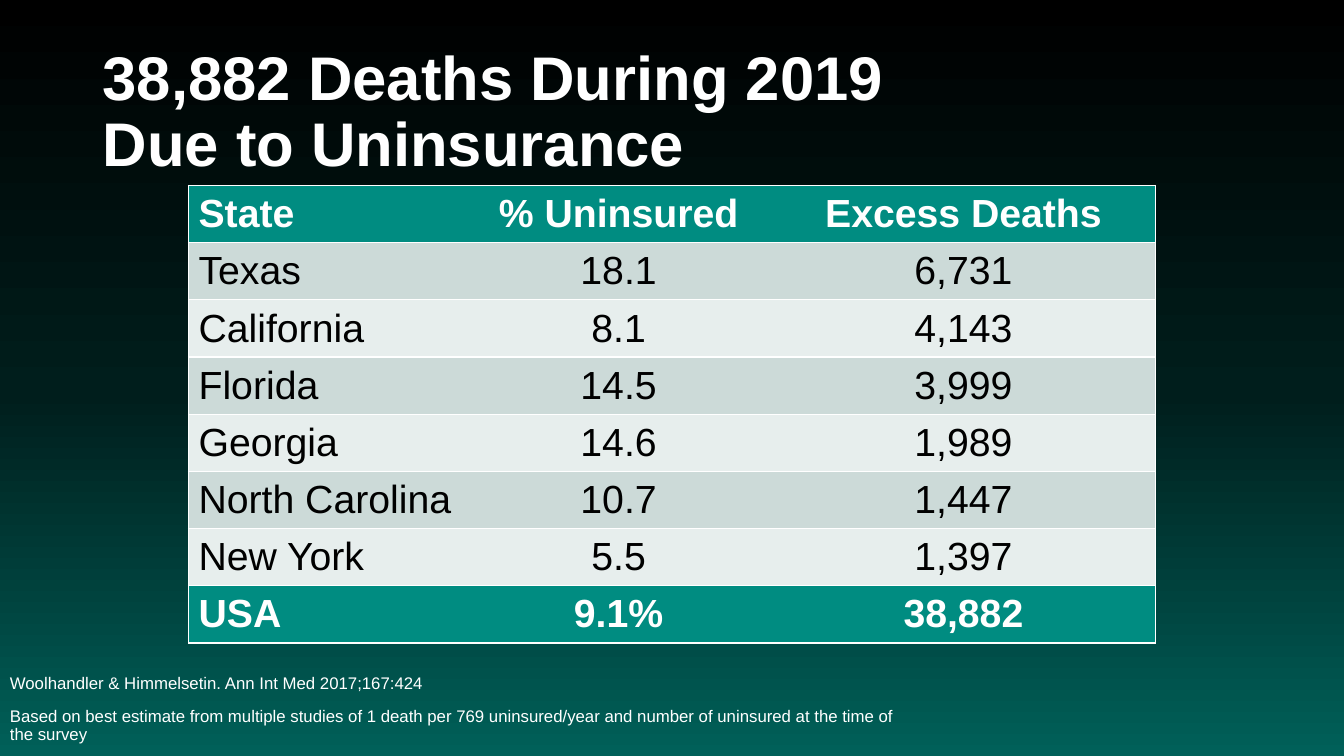
from copy import deepcopy

from lxml import etree
from pptx import Presentation
from pptx.dml.color import RGBColor
from pptx.enum.text import MSO_ANCHOR, PP_ALIGN
from pptx.oxml.ns import qn
from pptx.util import Inches, Pt

MIDDLE = MSO_ANCHOR.MIDDLE
LEFT, CENTER = PP_ALIGN.LEFT, PP_ALIGN.CENTER
FONT = "Arial"
WIDTH, HEIGHT = Inches(13.33), Inches(7.5)
COLORS = {
    "white": "FFFFFF", "black": "000000", "teal": "008C81",
    "dark_band": "CCDAD8", "light_band": "E7EEED",
    "sky_mid": "001E1C", "sky_end": "006059",
}
BACKGROUND = [(0, "black"), (0.52, "sky_mid"), (1, "sky_end")]
COLUMNS = [2.75, 3.03, 3.81]
ROW_HEIGHT = 0.54
ROWS = [
    ("State", "% Uninsured", "Excess Deaths"),
    ("Texas", "18.1", "6,731"),
    ("California", "8.1", "4,143"),
    ("Florida", "14.5", "3,999"),
    ("Georgia", "14.6", "1,989"),
    ("North Carolina", "10.7", "1,447"),
    ("New York", "5.5", "1,397"),
    ("USA", "9.1%", "38,882"),
]


def rgb(name):
    """Return the named colour."""
    return RGBColor.from_string(COLORS[name])


def set_background(s, stops):
    """Fill the slide with a top-to-bottom gradient."""
    fill = s.background.fill
    fill.gradient()
    fill.gradient_angle = 270
    gs_list = s._element.find(".//" + qn("a:gsLst"))
    while len(gs_list) < len(stops):
        gs_list.append(deepcopy(gs_list[0]))
    for stop, (position, color) in zip(fill.gradient_stops, stops):
        stop.position = position
        stop.color.rgb = rgb(color)


def style_paragraph(p, size, color, bold=False, align=LEFT):
    """Set the font and alignment of a paragraph."""
    p.alignment = align
    p.font.name = FONT
    p.font.size = Pt(size)
    p.font.bold = bold
    p.font.color.rgb = rgb(color)


def add_text(s, x, y, w, h, lines, size, bold=False):
    """Add a white text box with one paragraph per line."""
    tf = s.shapes.add_textbox(Inches(x), Inches(y), Inches(w), Inches(h)).text_frame
    tf.word_wrap = True
    tf.vertical_anchor = MIDDLE
    for i, line in enumerate(lines):
        p = tf.add_paragraph() if i else tf.paragraphs[0]
        p.text = line
        p.line_spacing = 0.9
        p.space_before = Pt(10 if i else 0)
        style_paragraph(p, size, "white", bold)


def set_borders(cell, sides):
    """Draw white lines on the given sides and none on the others."""
    tc_pr = cell._tc.get_or_add_tcPr()
    for side in "LRTB":
        ln = etree.SubElement(tc_pr, qn("a:ln" + side), w=str(Pt(1)))
        if side in sides:
            fill = etree.SubElement(ln, qn("a:solidFill"))
            etree.SubElement(fill, qn("a:srgbClr"), val=COLORS["white"])
        else:
            etree.SubElement(ln, qn("a:noFill"))


def add_state_table(s, x, y):
    """Add the table of states with teal first and last rows."""
    last_row, last_col = len(ROWS) - 1, len(COLUMNS) - 1
    table = s.shapes.add_table(
        len(ROWS), len(COLUMNS), Inches(x), Inches(y),
        Inches(sum(COLUMNS)), Inches(ROW_HEIGHT * len(ROWS))).table
    table.first_row = table.horz_banding = False
    for column, width in zip(table.columns, COLUMNS):
        column.width = Inches(width)
    for i, values in enumerate(ROWS):
        table.rows[i].height = Inches(ROW_HEIGHT)
        strong = i in (0, last_row)
        band = "teal" if strong else "dark_band" if i % 2 else "light_band"
        for j, value in enumerate(values):
            cell = table.cell(i, j)
            cell.vertical_anchor = MIDDLE
            set_borders(cell, "TB" + {0: "L", last_col: "R"}.get(j, ""))
            cell.fill.solid()
            cell.fill.fore_color.rgb = rgb(band)
            p = cell.text_frame.paragraphs[0]
            p.text = value
            style_paragraph(p, 28, "white" if strong else "black",
                            strong, CENTER if j else LEFT)


def main():
    """Build the slide and save it."""
    prs = Presentation()
    prs.slide_width, prs.slide_height = WIDTH, HEIGHT
    s = prs.slides.add_slide(prs.slide_layouts[6])
    set_background(s, BACKGROUND)
    add_text(s, 0.92, 0.4, 11.5, 1.45,
             ["38,882 Deaths During 2019\vDue to Uninsurance"], 44, True)
    add_text(s, 0, 6.58, 9, 0.92, [
        "Woolhandler & Himmelsetin. Ann Int Med 2017;167:424",
        "Based on best estimate from multiple studies of 1 death per 769 "
        "uninsured/year and number of uninsured at the time of the survey",
    ], 12)
    add_state_table(s, 1.87, 1.84)
    prs.save("out.pptx")


if __name__ == "__main__":
    main()
